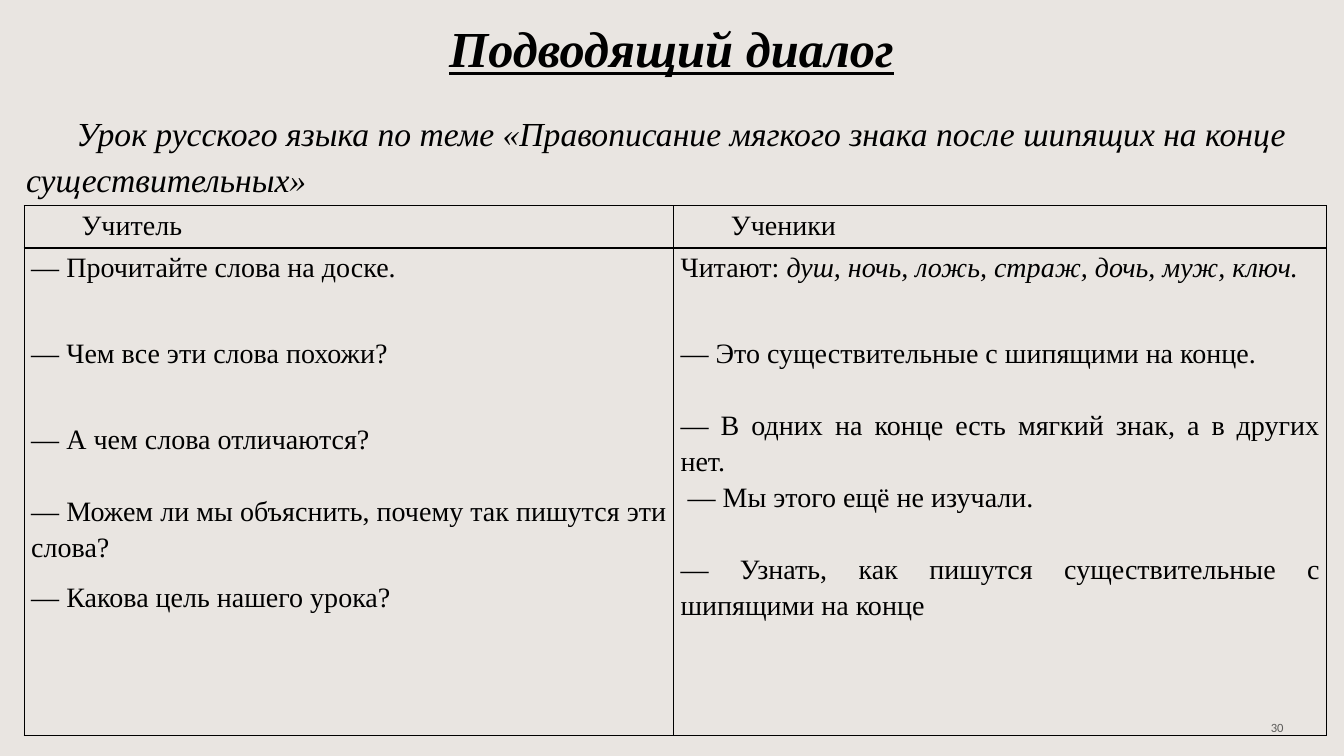
import lxml.etree
import pptx
import pptx.dml.color
import pptx.enum.text
import pptx.oxml.ns
import pptx.util

Inches = pptx.util.Inches
Pt = pptx.util.Pt
ALIGN = pptx.enum.text.PP_ALIGN
ANCHOR = pptx.enum.text.MSO_ANCHOR

BLACK = "000000"
SERIF = "Times New Roman"
LINE_GAP = 26
WIDE_GAP = 36

TEACHER = [
    (0, 0, [("— Прочитайте слова на доске.", False)]),
    (WIDE_GAP, 0, [("— Чем все эти слова похожи?", False)]),
    (WIDE_GAP, 0, [("— А чем слова отличаются?", False)]),
    (LINE_GAP, 0, [("— Можем ли мы объяснить, почему так пишутся эти слова?", False)]),
    (10, 0, [("— Какова цель нашего урока?", False)]),
]
PUPILS = [
    (0, 0, [("Читают: ", False), ("душ, ночь, ложь, страж, дочь, муж, ключ.", True)]),
    (WIDE_GAP, 0, [("— Это существительные с шипящими на конце.", False)]),
    (LINE_GAP, 0, [("— В одних на конце есть мягкий знак, а в других нет.", False)]),
    (0, 0.07, [("— Мы этого ещё не изучали.", False)]),
    (LINE_GAP, 0, [("— Узнать, как пишутся существительные с шипящими на конце", False)]),
]
DIALOGUE = [
    [[(0, 0.5, [("Учитель", False)])], [(0, 0.5, [("Ученики", False)])]],
    [TEACHER, PUPILS],
]


def color(code):
    """Turn a hex string into a colour."""
    return pptx.dml.color.RGBColor.from_string(code)


def add_span(para, text, size, italic=False, bold=False, font=SERIF, code=BLACK):
    """Add one formatted run to a paragraph."""
    span = para.add_run()
    span.text = text
    span.font.name = font
    span.font.size = Pt(size)
    span.font.italic = italic
    span.font.bold = bold
    span.font.color.rgb = color(code)
    return span


def set_first_indent(para, inches):
    """Indent the first line of a paragraph."""
    properties = para._p.get_or_add_pPr()
    properties.set("marL", "0")
    properties.set("indent", str(Inches(inches)))


def add_title(page, left, top, width, height):
    """Place and format the slide title."""
    box = page.shapes.title
    box.left, box.top, box.width, box.height = left, top, width, height
    box.text_frame.vertical_anchor = ANCHOR.TOP
    para = box.text_frame.paragraphs[0]
    para.alignment = ALIGN.CENTER
    add_span(para, "Подводящий диалог", 36, italic=True, bold=True).font.underline = True


def add_topic(page, left, top, width, height):
    """Add the line that names the lesson."""
    box = page.shapes.add_textbox(left, top, width, height)
    box.text_frame.word_wrap = True
    para = box.text_frame.paragraphs[0]
    para.line_spacing = 1.15
    set_first_indent(para, 0.5)
    add_span(para, "Урок русского языка по теме «Правописание мягкого знака "
             "после шипящих на конце существительных»", 24, italic=True)


def add_page_number(page, left, top, width, height):
    """Add the slide number at the right of its box."""
    box = page.shapes.add_textbox(left, top, width, height)
    box.text_frame.word_wrap = True
    box.text_frame.vertical_anchor = ANCHOR.MIDDLE
    para = box.text_frame.paragraphs[0]
    para.alignment = ALIGN.RIGHT
    add_span(para, "30", 9, font="Calibri", code="5D5C5A")


def set_borders(cell):
    """Give a cell thin black borders on all sides."""
    qn = pptx.oxml.ns.qn
    properties = cell._tc.get_or_add_tcPr()
    for index, side in enumerate(("a:lnL", "a:lnR", "a:lnT", "a:lnB")):
        line = lxml.etree.Element(qn(side), w=str(Pt(1)))
        fill = lxml.etree.SubElement(line, qn("a:solidFill"))
        lxml.etree.SubElement(fill, qn("a:srgbClr"), val=BLACK)
        properties.insert(index, line)


def fill_cell(cell, lines):
    """Write the lines of one cell and style it."""
    cell.fill.background()
    set_borders(cell)
    cell.margin_left = cell.margin_right = Inches(0.07)
    cell.margin_top = cell.margin_bottom = 0
    frame = cell.text_frame
    for index, (gap, indent, spans) in enumerate(lines):
        para = frame.add_paragraph() if index else frame.paragraphs[0]
        para.alignment = ALIGN.JUSTIFY
        para.line_spacing = 1.15
        para.space_before = Pt(gap)
        set_first_indent(para, indent)
        for text, italic in spans:
            add_span(para, text, 20, italic)


def add_dialogue(page, left, top, width, height):
    """Add the table of teacher and pupil lines."""
    table = page.shapes.add_table(2, 2, left, top, width, height).table
    table.first_row = False
    table.horz_banding = False
    table.columns[0].width = Inches(6.44)
    table.columns[1].width = width - Inches(6.44)
    table.rows[0].height = Inches(0.42)
    table.rows[1].height = height - Inches(0.42)
    for row, texts in zip(table.rows, DIALOGUE):
        for cell, lines in zip(row.cells, texts):
            fill_cell(cell, lines)


def main():
    """Build the slide and save the deck."""
    deck = pptx.Presentation()
    deck.slide_width = Inches(13.33)
    deck.slide_height = Inches(7.5)
    page = deck.slides.add_slide(deck.slide_layouts[5])
    page.background.fill.solid()
    page.background.fill.fore_color.rgb = color("E9E5E1")
    add_page_number(page, Inches(9.83), Inches(7.02), Inches(3), Inches(0.4))
    add_title(page, Inches(0.16), Inches(0.12), Inches(13), Inches(0.71))
    add_topic(page, Inches(0.16), Inches(1.01), Inches(13), Inches(1.03))
    add_dialogue(page, Inches(0.24), Inches(2.04), Inches(12.92), Inches(5.26))
    deck.save("out.pptx")


if __name__ == "__main__":
    main()
